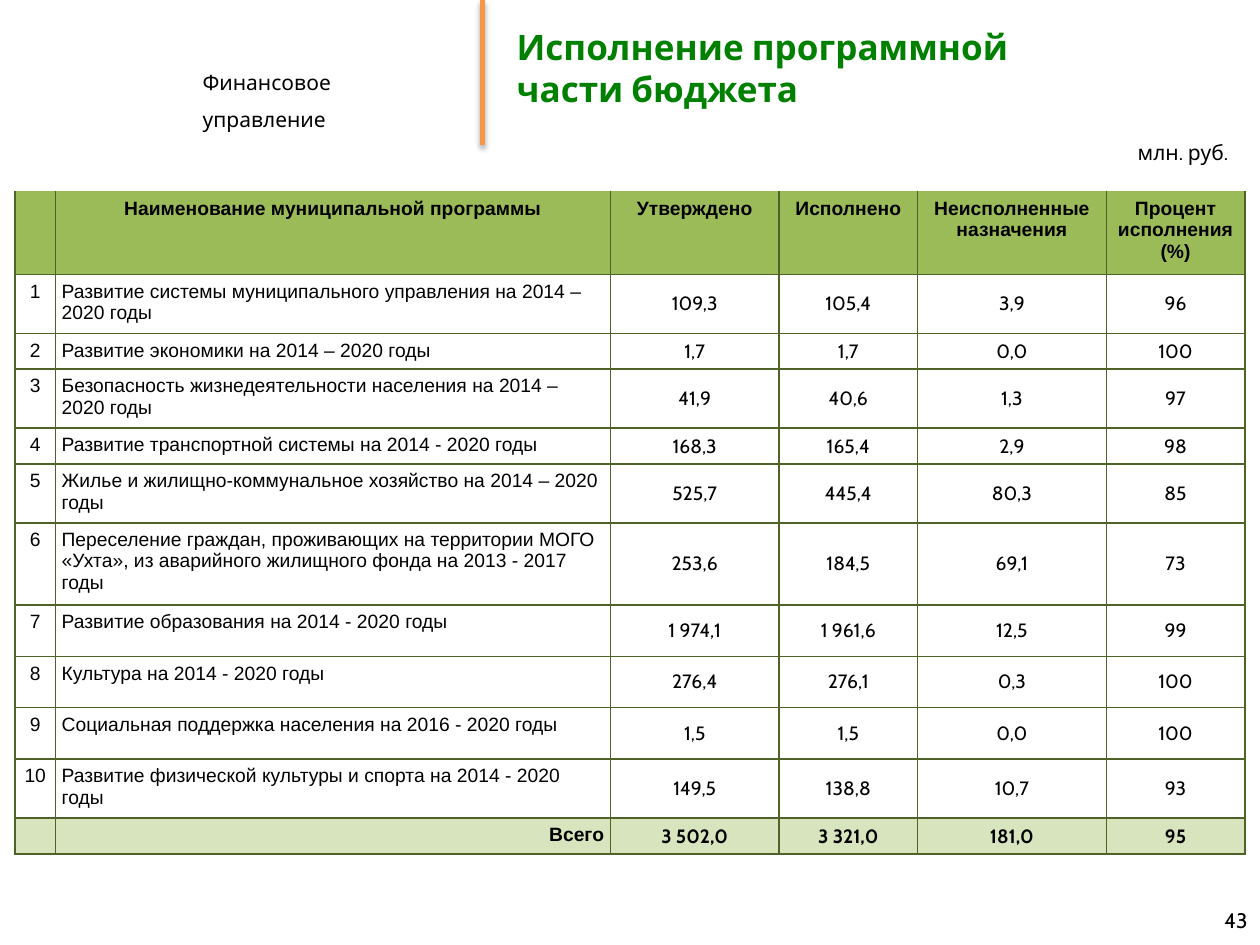
from collections import namedtuple
from dataclasses import dataclass

from lxml import etree
from pptx import Presentation
from pptx.dml.color import RGBColor
from pptx.enum.shapes import MSO_CONNECTOR
from pptx.enum.text import MSO_ANCHOR, MSO_AUTO_SIZE, PP_ALIGN
from pptx.oxml.ns import qn
from pptx.util import Inches, Pt

LEFT, MID, RIGHT = PP_ALIGN.LEFT, PP_ALIGN.CENTER, PP_ALIGN.RIGHT
TOP, CENTER = MSO_ANCHOR.TOP, MSO_ANCHOR.MIDDLE
FIXED = MSO_AUTO_SIZE.NONE
STRAIGHT = MSO_CONNECTOR.STRAIGHT
UNIT = Inches(0.1)
COLS, ROWS = 100, 75
Box = namedtuple("Box", "x y w h")


@dataclass(frozen=True)
class Theme:
    ink: str = "000000"
    title: str = "008000"
    rule: str = "F79646"
    head: str = "9BBB59"
    total: str = "D7E4BD"
    edge: str = "4F6228"
    sans: str = "Arial"
    face: str = "Cabin"
    big: int = 20
    body: int = 12
    small: int = 11


THEME = Theme()
WIDTHS = (3.2, 44.1, 13.4, 11, 15, 11)
HEIGHTS = (6.6, 4.7, 2.8, 4.7, 2.8, 4.7, 6.5, 4.1, 4.1, 4.1, 4.7, 2.8)
HEAD = ("", "Наименование муниципальной программы", "Утверждено", "Исполнено",
        "Неисполненные назначения", "Процент исполнения\n(%)")
DATA = (
    ("Развитие системы муниципального управления на 2014 – 2020 годы",
     "109,3", "105,4", "3,9", "96"),
    ("Развитие экономики на 2014 – 2020 годы", "1,7", "1,7", "0,0", "100"),
    ("Безопасность жизнедеятельности населения на 2014 – 2020 годы",
     "41,9", "40,6", "1,3", "97"),
    ("Развитие транспортной системы на 2014 - 2020 годы",
     "168,3", "165,4", "2,9", "98"),
    ("Жилье и жилищно-коммунальное хозяйство на 2014 – 2020 годы",
     "525,7", "445,4", "80,3", "85"),
    ("Переселение граждан, проживающих на территории МОГО «Ухта», "
     "из аварийного жилищного фонда на 2013 - 2017 годы",
     "253,6", "184,5", "69,1", "73"),
    ("Развитие образования на 2014 - 2020 годы",
     "1 974,1", "1 961,6", "12,5", "99"),
    ("Культура на 2014 - 2020 годы", "276,4", "276,1", "0,3", "100"),
    ("Социальная поддержка населения на 2016 - 2020 годы",
     "1,5", "1,5", "0,0", "100"),
    ("Развитие физической культуры и спорта на 2014 - 2020 годы",
     "149,5", "138,8", "10,7", "93"),
)
TOTAL = ("", "Всего", "3 502,0", "3 321,0", "181,0", "95")


def grid(*cells):
    return [round(cell * UNIT) for cell in cells]


def write(frame, text, size=THEME.body, face=THEME.face, color=THEME.ink,
          bold=False, align=LEFT, space=None):
    for i, line in enumerate(text.split("\n")):
        para = frame.add_paragraph() if i else frame.paragraphs[0]
        para.alignment = align
        if space:
            para.line_spacing = space
        if not line:
            para._p.get_or_add_endParaRPr().set("sz", str(size * 100))
            continue
        run = para.add_run()
        run.text = line
        font = run.font
        font.size, font.name, font.bold = Pt(size), face, bold
        font.color.rgb = RGBColor.from_string(color)


def label(slide, box, text, anchor=TOP, wrap=True, **form):
    frame = slide.shapes.add_textbox(*grid(*box)).text_frame
    frame.word_wrap = wrap
    frame.vertical_anchor = anchor
    write(frame, text, **form)


def heading(slide, box):
    title = slide.shapes.title
    title.left, title.top, title.width, title.height = grid(*box)
    frame = title.text_frame
    frame.word_wrap, frame.auto_size = True, FIXED
    frame.vertical_anchor = CENTER
    write(frame, "Исполнение программной части бюджета",
          size=THEME.big, color=THEME.title, bold=True)


def divider(slide, box):
    ends = grid(box.x, box.y, box.x + box.w, box.y + box.h)
    line = slide.shapes.add_connector(STRAIGHT, *ends)
    line.line.width = Pt(3)
    line.line.color.rgb = RGBColor.from_string(THEME.rule)
    effect = etree.SubElement(line._element.spPr, qn("a:effectLst"))
    shade = etree.SubElement(effect, qn("a:outerShdw"), blurRad=str(Pt(3.1)),
                             dist=str(Pt(1.8)), dir="5400000", rotWithShape="0")
    tint = etree.SubElement(shade, qn("a:srgbClr"), val=THEME.ink)
    etree.SubElement(tint, qn("a:alpha"), val="35000")


def border(cell, top):
    props = cell._tc.get_or_add_tcPr()
    for i, side in enumerate(("lnL", "lnR", "lnT", "lnB")):
        edge = etree.Element(qn(f"a:{side}"), w=str(Pt(1)))
        fill = etree.SubElement(edge, qn("a:solidFill"))
        color = top if side == "lnT" else THEME.edge
        etree.SubElement(fill, qn("a:srgbClr"), val=color)
        props.insert(i, edge)


def style(cell, text, row, col):
    first, last = row == 0, row == len(HEIGHTS) - 1
    cell.margin_left = cell.margin_right = Inches(0.05)
    cell.margin_top = cell.margin_bottom = Inches(0.05)
    value = col > 1 and not first
    cell.vertical_anchor = CENTER if value else TOP
    if first or last:
        cell.fill.solid()
        shade = THEME.head if first else THEME.total
        cell.fill.fore_color.rgb = RGBColor.from_string(shade)
    else:
        cell.fill.background()
    align = MID
    if col == 1 and not first:
        align = RIGHT if last else LEFT
    write(cell.text_frame, text, size=THEME.small, align=align,
          face=THEME.face if value else THEME.sans, bold=first or last)
    border(cell, THEME.head if first else THEME.edge)


def budget(slide, box):
    rows = [HEAD, *((str(i), *row) for i, row in enumerate(DATA, 1)), TOTAL]
    frame = slide.shapes.add_table(len(rows), len(WIDTHS), *grid(*box))
    table = frame.table
    table.first_row = table.horz_banding = False
    for col, size in zip(table.columns, WIDTHS):
        col.width = round(box.w * UNIT * size / sum(WIDTHS))
    for row, size in zip(table.rows, HEIGHTS):
        row.height = round(box.h * UNIT * size / sum(HEIGHTS))
    for r, row in enumerate(rows):
        for c, text in enumerate(row):
            style(table.cell(r, c), text, r, c)


def main():
    deck = Presentation()
    deck.slide_width, deck.slide_height = grid(COLS, ROWS)
    slide = deck.slides.add_slide(deck.slide_layouts[5])
    label(slide, Box(15.1, 4, 21, 3.6), "Финансовое управление", space=1.5)
    divider(slide, Box(38.3, 0, 0, 11.5))
    heading(slide, Box(40, 0.3, 48.8, 10.1))
    budget(slide, Box(1.2, 15.2, 97.6, 52.4))
    label(slide, Box(89.3, 10.6, 9.2, 3), "млн. руб.", wrap=False)
    label(slide, Box(76.7, 71, 23.3, 4), "43", anchor=CENTER, align=RIGHT)
    deck.save("out.pptx")


if __name__ == "__main__":
    main()
